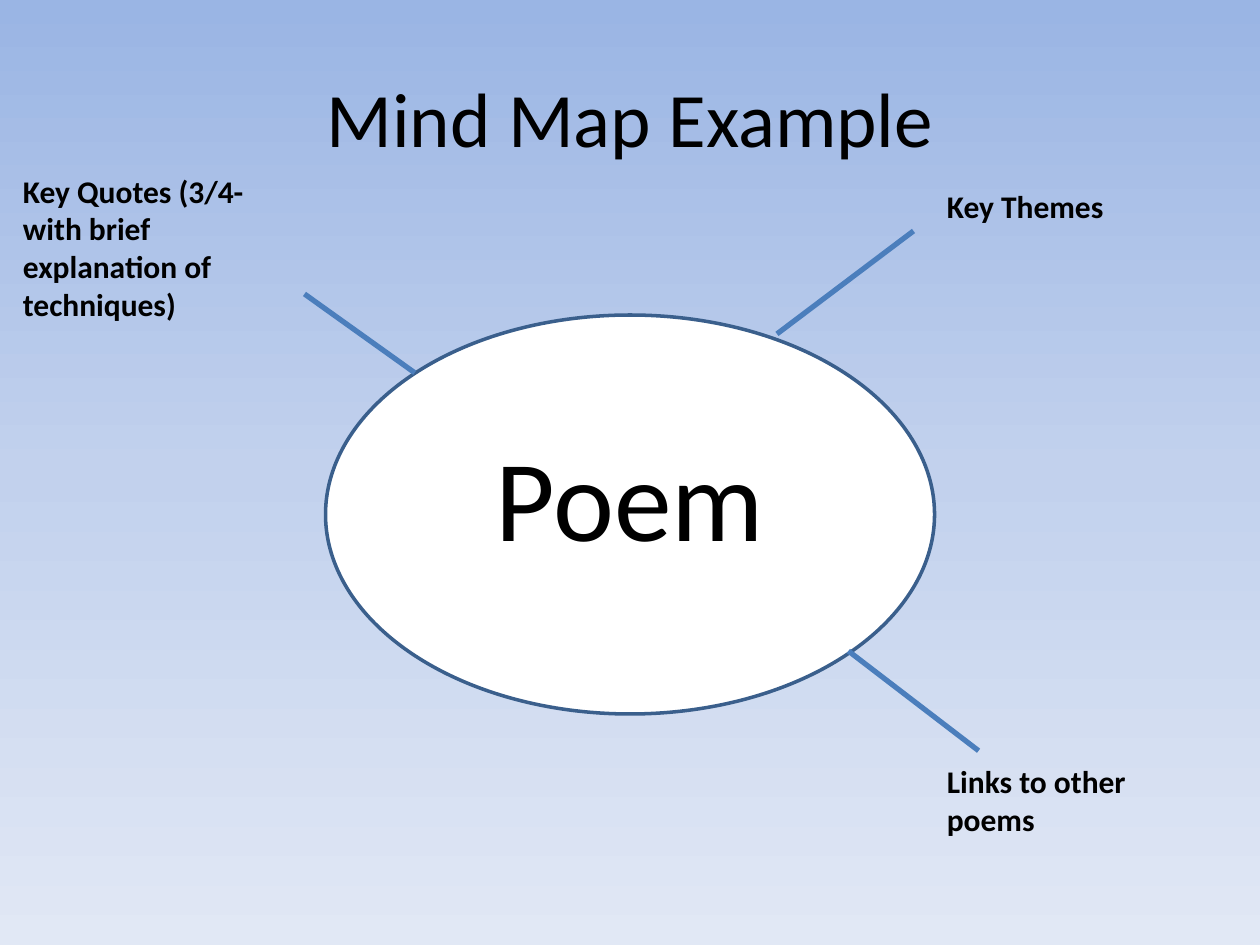
"""Builds a mind map slide about a poem on a grid of 120 columns by 90 rows."""
import copy

import pptx
import pptx.dml.color
import pptx.enum.shapes
import pptx.enum.text
import pptx.oxml.ns
import pptx.util

WIDTH, HEIGHT = pptx.util.Inches(10), pptx.util.Inches(7.5)
COLS, ROWS = 120, 90
FONT = "Calibri"
COLORS = {
    "top": "9AB5E4",
    "middle": "C2D1ED",
    "bottom": "E1E8F5",
    "text": "000000",
    "oval": "FFFFFF",
    "edge": "3A5F8C",
    "branch": "4B7EBC",
}
LABELS = [
    ("Key Quotes (3/4-with brief explanation of techniques)", 1, 15.75, 15.75),
    ("Key Themes", 89, 17.2, 4.8),
    ("Links to other poems", 89, 72, 8.5),
]
BRANCHES = [
    (93.2, 71.5, 80.8, 62),
    (74, 31.8, 87, 22),
    (39.5, 35.5, 29, 28),
]


def color(name):
    """Return the named colour."""
    return pptx.dml.color.RGBColor.from_string(COLORS[name])


def place(*cells):
    """Turn alternating columns and rows into lengths."""
    sides = (WIDTH / COLS, HEIGHT / ROWS)
    return [round(cell * sides[i % 2]) for i, cell in enumerate(cells)]


def paint_back(slide):
    """Give the slide a vertical gradient of three colours."""
    fill = slide.background.fill
    fill.gradient()
    fill.gradient_angle = 270
    stops = next(slide.element.iter(pptx.oxml.ns.qn("a:gsLst")))
    stops.insert(1, copy.deepcopy(stops[0]))
    names = ("top", "middle", "bottom")
    for stop, name, share in zip(fill.gradient_stops, names, (0, 0.5, 1)):
        stop.color.rgb = color(name)
        stop.position = share


def write(frame, text, size, bold=False, center=False):
    """Write one paragraph into a text frame."""
    frame.word_wrap = True
    line = frame.paragraphs[0]
    line.text = text
    line.font.name = FONT
    line.font.size = pptx.util.Pt(size)
    line.font.bold = bold
    line.font.color.rgb = color("text")
    align = pptx.enum.text.PP_ALIGN
    line.alignment = align.CENTER if center else align.LEFT


def add_title(slide, text):
    """Place and fill the title."""
    title = slide.shapes.title
    title.left, title.top, title.width, title.height = place(6, 3.6, 108, 15)
    title.text_frame.vertical_anchor = pptx.enum.text.MSO_ANCHOR.MIDDLE
    write(title.text_frame, text, 44, center=True)


def add_oval(slide, *cells):
    """Add the oval at the heart of the map."""
    kind = pptx.enum.shapes.MSO_SHAPE.OVAL
    oval = slide.shapes.add_shape(kind, *place(*cells))
    oval.shadow.inherit = False
    oval.fill.solid()
    oval.fill.fore_color.rgb = color("oval")
    oval.line.color.rgb = color("edge")
    oval.line.width = pptx.util.Pt(2)


def add_text(slide, text, cells, size, **style):
    """Add a text box that grows with its text."""
    frame = slide.shapes.add_textbox(*place(*cells)).text_frame
    frame.auto_size = pptx.enum.text.MSO_AUTO_SIZE.SHAPE_TO_FIT_TEXT
    write(frame, text, size, **style)


def add_branch(slide, *cells):
    """Add a straight line between two grid points."""
    kind = pptx.enum.shapes.MSO_CONNECTOR.STRAIGHT
    branch = slide.shapes.add_connector(kind, *place(*cells))
    branch.line.color.rgb = color("branch")
    branch.line.width = pptx.util.Pt(3)
    props = branch.element.spPr
    props.append(props.makeelement(pptx.oxml.ns.qn("a:effectLst"), {}))


def main():
    """Build and save the slide."""
    deck = pptx.Presentation()
    deck.slide_width, deck.slide_height = WIDTH, HEIGHT
    slide = deck.slides.add_slide(deck.slide_layouts.get_by_name("Title Only"))
    paint_back(slide)
    add_title(slide, "Mind Map Example")
    add_oval(slide, 31, 30, 58, 38)
    add_text(slide, "Poem", (36, 40, 48, 14.5), 66, center=True)
    for branch in BRANCHES:
        add_branch(slide, *branch)
    for text, left, top, height in LABELS:
        add_text(slide, text, (left, top, 28, height), 18, bold=True)
    deck.save("out.pptx")


if __name__ == "__main__":
    main()
